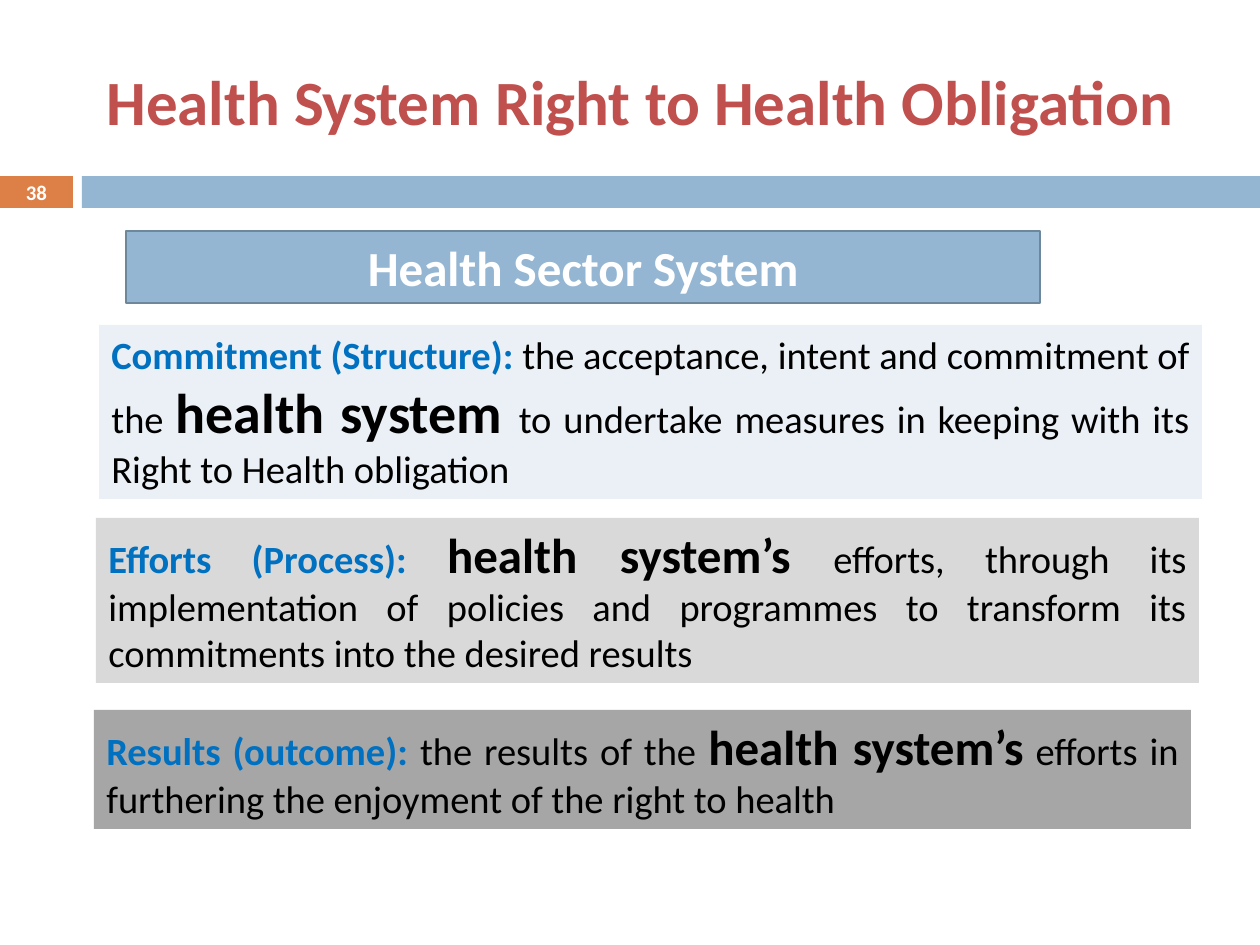
from pptx import Presentation
from pptx.dml.color import RGBColor
from pptx.enum.shapes import MSO_SHAPE
from pptx.enum.text import MSO_ANCHOR, PP_ALIGN
from pptx.util import Emu, Pt

PX = 914400 // 126
FONT = "Calibri"
COLORS = {
    "orange": "DD8047", "blue": "94B6D2", "outline": "6D879B", "title": "C0504D",
    "label": "0070C0", "black": "000000", "white": "FFFFFF",
    "pale": "EAF0F6", "light gray": "D9D9D9", "gray": "A6A6A6",
}

# A run is (text, size, color, bold); a box is (left, top, width, height).
TITLE = ((94, 21, 1113, 158), ("Health System Right to Health Obligation", 36, "title", True))
PAGE_NUMBER = ((0, 176, 73, 32), ("38", 11.9, "white", True))
BAND = (82, 176, 1178, 32)
HEADING = ((126, 231, 914, 72), ("Health Sector System", 28, "white", True))
STATEMENTS = [
    ((99, 325, 1103, 174), "pale", [
        ("Commitment (Structure): ", 22, "label", True),
        ("the acceptance, intent and commitment of the ", 22, "black", False),
        ("health system ", 32, "black", True),
        ("to undertake measures in keeping with its Right to Health obligation", 22, "black", False),
    ]),
    ((96, 518, 1103, 165), "light gray", [
        ("Efforts (Process): ", 22, "label", True),
        ("health system’s ", 28, "black", True),
        ("efforts, through its implementation of policies and programmes to transform "
         "its commitments into the desired results", 22, "black", False),
    ]),
    ((94, 710, 1097, 119), "gray", [
        ("Results (outcome): ", 22, "label", True),
        ("the results of the ", 22, "black", False),
        ("health system’s", 28, "black", True),
        (" efforts in furthering the enjoyment of the right to health", 22, "black", False),
    ]),
]


def color(name):
    return RGBColor.from_string(COLORS[name])


def add_bar(slide, box, fill, line=None):
    shape = slide.shapes.add_shape(MSO_SHAPE.RECTANGLE, *(Emu(v * PX) for v in box))
    shape.shadow.inherit = False
    shape.fill.solid()
    shape.fill.fore_color.rgb = color(fill)
    if line:
        shape.line.color.rgb = color(line)
        shape.line.width = Pt(1.5)
    else:
        shape.line.fill.background()
    return shape


def write(shape, runs, alignment, anchor=MSO_ANCHOR.TOP):
    frame = shape.text_frame
    frame.word_wrap = True
    frame.vertical_anchor = anchor
    paragraph = frame.paragraphs[0]
    paragraph.alignment = alignment
    for text, size, color_name, bold in runs:
        run = paragraph.add_run()
        run.text = text
        run.font.name = FONT
        run.font.size = Pt(size)
        run.font.bold = bold
        run.font.color.rgb = color(color_name)


def main():
    presentation = Presentation()
    presentation.slide_width = Emu(1260 * PX)
    presentation.slide_height = Emu(945 * PX)
    slide = presentation.slides.add_slide(presentation.slide_layouts[6])

    box, run = PAGE_NUMBER
    number = add_bar(slide, box, "orange")
    write(number, [run], PP_ALIGN.CENTER, MSO_ANCHOR.MIDDLE)
    number.text_frame.margin_top = number.text_frame.margin_bottom = 0
    add_bar(slide, BAND, "blue")

    box, run = TITLE
    title = slide.shapes.add_textbox(*(Emu(v * PX) for v in box))
    write(title, [run], PP_ALIGN.JUSTIFY, MSO_ANCHOR.MIDDLE)

    for box, fill, runs in STATEMENTS:
        write(add_bar(slide, box, fill), runs, PP_ALIGN.JUSTIFY)

    box, run = HEADING
    write(add_bar(slide, box, "blue", "outline"), [run], PP_ALIGN.CENTER)

    presentation.save("out.pptx")


if __name__ == "__main__":
    main()
